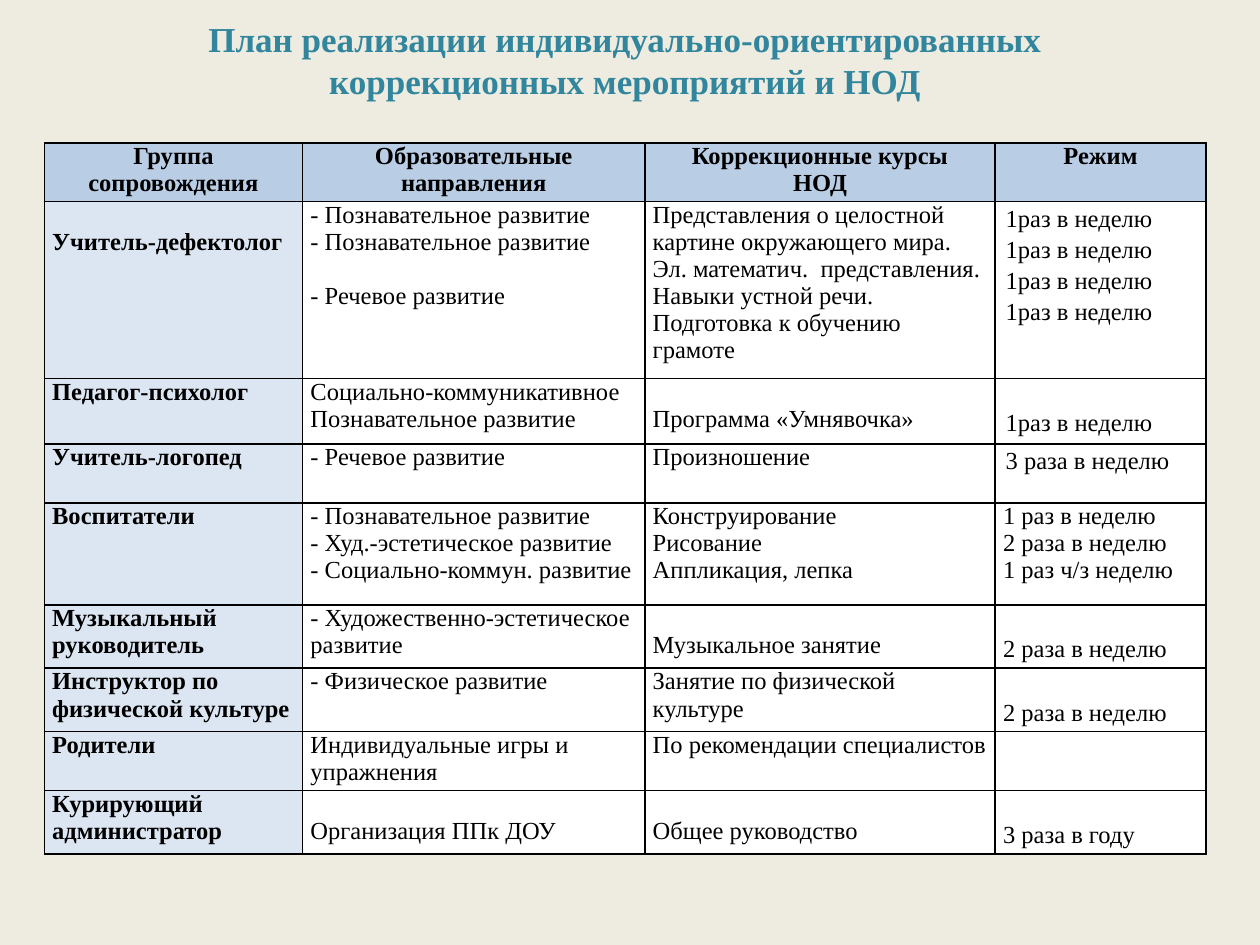
from dataclasses import dataclass

from lxml import etree
from pptx import Presentation
from pptx.dml.color import RGBColor
from pptx.enum.text import PP_ALIGN
from pptx.oxml.ns import qn
from pptx.util import Pt

CENTER, LEFT = PP_ALIGN.CENTER, PP_ALIGN.LEFT

BACKGROUND = RGBColor(0xEE, 0xEC, 0xE1)
TEAL = RGBColor(0x31, 0x85, 0x9C)
BLACK = RGBColor(0x00, 0x00, 0x00)
WHITE = RGBColor(0xFF, 0xFF, 0xFF)
HEADER_BLUE = RGBColor(0xB9, 0xCD, 0xE5)
GROUP_BLUE = RGBColor(0xDC, 0xE6, 0xF2)

FONT = "Times New Roman"
LINE = 15.5  # height of one line of table text, in points
LOOSE = 1.15
COLUMN_WIDTHS = (147.6, 195.6, 200.2, 120.4)


@dataclass
class Entry:
    """Cell text; lowered is the offset of its first line in lines."""
    text: str = ""
    lowered: float = 0
    spacing: float = 1
    indent: float = 0
    gap_before: int = -1  # paragraph that is set one line apart


@dataclass
class PlanRow:
    height: float
    entries: tuple[Entry, ...]


HEADER = PlanRow(33.6, (
    Entry("Группа сопровождения"),
    Entry("Образовательные направления"),
    Entry("Коррекционные курсы\nНОД"),
    Entry("Режим"),
))

PLAN = (
    PlanRow(100.7, (
        Entry("Учитель-дефектолог", lowered=1),
        Entry("- Познавательное развитие\n- Познавательное развитие\n"
              "- Речевое развитие", gap_before=2),
        Entry("Представления о целостной\nкартине окружающего мира.\n"
              "Эл. математич.  представления.\nНавыки устной речи.\n"
              "Подготовка к обучению грамоте"),
        Entry("\n".join(["1раз в неделю"] * 4), spacing=LOOSE, indent=1.5),
    )),
    PlanRow(37.6, (
        Entry("Педагог-психолог"),
        Entry("Социально-коммуникативное\nПознавательное развитие"),
        Entry("Программа «Умнявочка»", lowered=1),
        Entry("1раз в неделю", lowered=1, spacing=LOOSE, indent=1.5),
    )),
    PlanRow(33.6, (
        Entry("Учитель-логопед"),
        Entry("- Речевое развитие"),
        Entry("Произношение"),
        Entry("3 раза в неделю", spacing=LOOSE, indent=1.5),
    )),
    PlanRow(58.3, (
        Entry("Воспитатели"),
        Entry("- Познавательное развитие\n- Худ.-эстетическое развитие\n"
              "- Социально-коммун. развитие"),
        Entry("Конструирование\nРисование\nАппликация, лепка"),
        Entry("1 раз в неделю\n2 раза в неделю\n1 раз ч/з неделю"),
    )),
    PlanRow(36.2, (
        Entry("Музыкальный руководитель"),
        Entry("- Художественно-эстетическое развитие"),
        Entry("Музыкальное занятие", lowered=1),
        Entry("2 раза в неделю", lowered=1, spacing=LOOSE),
    )),
    PlanRow(36.2, (
        Entry("Инструктор по физической культуре"),
        Entry("- Физическое развитие"),
        Entry("Занятие по физической культуре"),
        Entry("2 раза в неделю", lowered=1, spacing=LOOSE),
    )),
    PlanRow(33.8, (
        Entry("Родители"),
        Entry("Индивидуальные игры и упражнения"),
        Entry("По рекомендации специалистов"),
        Entry(),
    )),
    PlanRow(36.2, (
        Entry("Курирующий администратор"),
        Entry("Организация ППк ДОУ", lowered=1),
        Entry("Общее руководство", lowered=1),
        Entry("3 раза в году", lowered=1, spacing=LOOSE),
    )),
)


def format_paragraph(paragraph, size: float, color: RGBColor, bold: bool, align) -> None:
    paragraph.alignment = align
    font = paragraph.font
    font.size, font.bold = Pt(size), bold
    for span in paragraph.runs:
        span.font.name = FONT
        span.font.size = Pt(size)
        span.font.bold = bold
        span.font.color.rgb = color


def add_borders(cell) -> None:
    properties = cell._tc.get_or_add_tcPr()
    for side in ("lnL", "lnR", "lnT", "lnB"):
        line = etree.SubElement(properties, qn(f"a:{side}"), w=str(int(Pt(1))))
        fill = etree.SubElement(line, qn("a:solidFill"))
        etree.SubElement(fill, qn("a:srgbClr"), val=str(BLACK))


def fill_cell(cell, entry: Entry, color: RGBColor, bold: bool, align) -> None:
    add_borders(cell)
    cell.fill.solid()
    cell.fill.fore_color.rgb = color
    cell.margin_left = cell.margin_right = Pt(4.5)
    cell.margin_top, cell.margin_bottom = Pt(entry.lowered * LINE), Pt(0)
    cell.text_frame.text = entry.text
    for index, paragraph in enumerate(cell.text_frame.paragraphs):
        if entry.indent:
            paragraph._p.get_or_add_pPr().set("marL", str(int(Pt(entry.indent))))
        if entry.spacing != 1:
            paragraph.line_spacing = entry.spacing
        if index == entry.gap_before:
            paragraph.space_before = Pt(LINE)
        format_paragraph(paragraph, 14, BLACK, bold, align)


def add_title(page) -> None:
    box = page.shapes.add_textbox(Pt(25.2), Pt(6.5), Pt(664), Pt(55.4))
    frame = box.text_frame
    frame.word_wrap = True
    frame.text = ("План реализации индивидуально-ориентированных\n"
                  "коррекционных мероприятий и НОД")
    for paragraph in frame.paragraphs:
        format_paragraph(paragraph, 20, TEAL, True, CENTER)


def add_plan_table(page) -> None:
    rows = (HEADER, *PLAN)
    table = page.shapes.add_table(
        len(rows), len(COLUMN_WIDTHS), Pt(25.3), Pt(81.6),
        Pt(sum(COLUMN_WIDTHS)), Pt(sum(row.height for row in rows))).table
    table.horz_banding = False
    for column, width in zip(table.columns, COLUMN_WIDTHS):
        column.width = Pt(width)
    for r, row in enumerate(rows):
        table.rows[r].height = Pt(row.height)
        for c, entry in enumerate(row.entries):
            if r == 0:
                color, align = HEADER_BLUE, CENTER
            else:
                color, align = (GROUP_BLUE if c == 0 else WHITE), LEFT
            fill_cell(table.cell(r, c), entry, color, r == 0 or c == 0, align)


def main() -> None:
    deck = Presentation()
    deck.slide_width, deck.slide_height = Pt(720), Pt(540)
    page = deck.slides.add_slide(deck.slide_layouts[6])
    page.background.fill.solid()
    page.background.fill.fore_color.rgb = BACKGROUND
    add_title(page)
    add_plan_table(page)
    deck.save("out.pptx")


if __name__ == "__main__":
    main()
